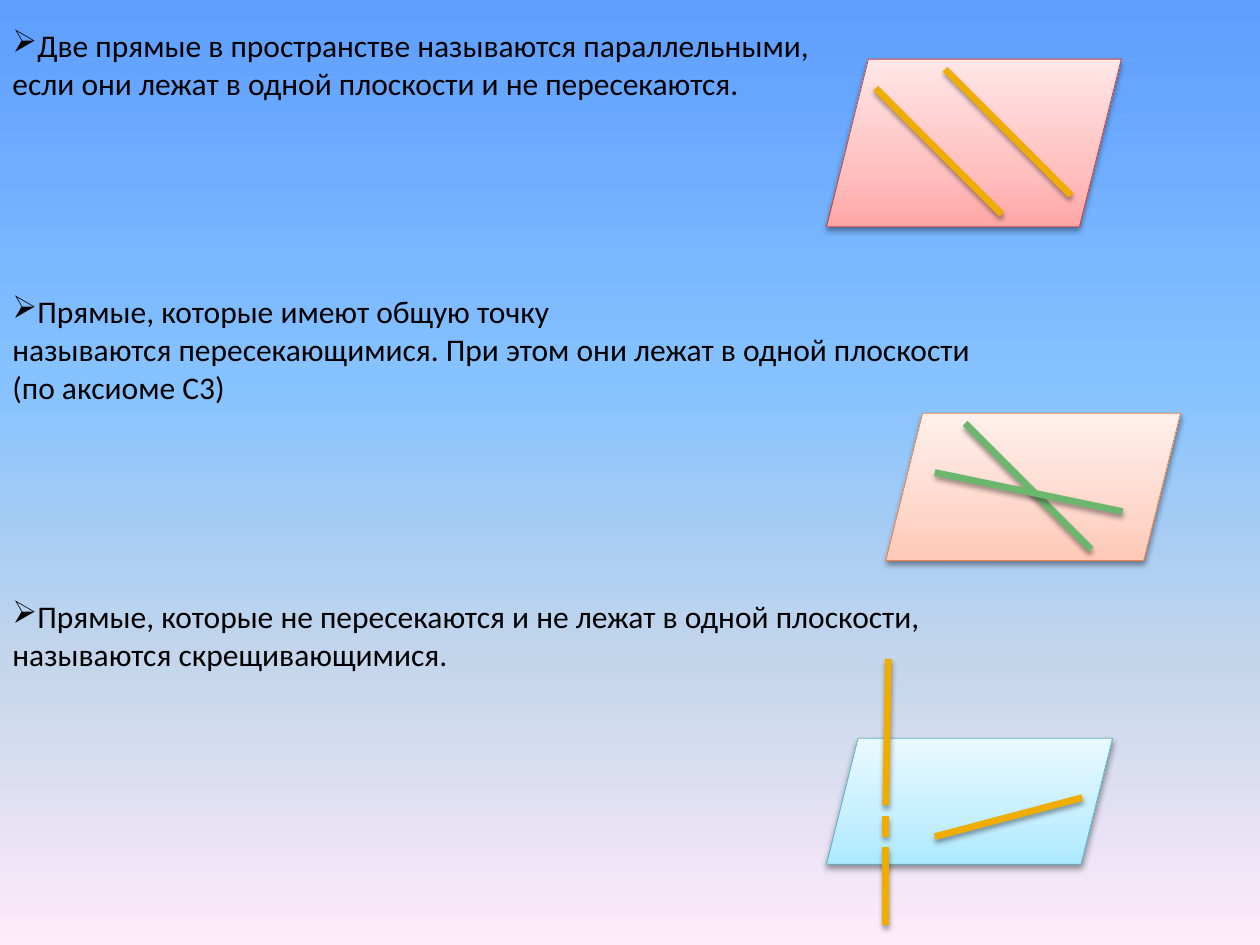
from lxml.etree import SubElement
from pptx import Presentation
from pptx.dml.color import RGBColor
from pptx.enum.shapes import MSO_CONNECTOR, MSO_SHAPE
from pptx.oxml.ns import qn
from pptx.util import Inches, Pt

BLACK = RGBColor(0x00, 0x00, 0x00)
GOLD = RGBColor(0xF0, 0xAD, 0x00)
GREEN = RGBColor(0x6B, 0xB7, 0x6D)
RED_EDGE = RGBColor(0xC5, 0x43, 0x42)
ORANGE_EDGE = RGBColor(0xE7, 0x82, 0x4C)
BLUE_EDGE = RGBColor(0x5B, 0xB3, 0xCA)

# Gradient stops: (position in percent, colour)
SKY = [(0, RGBColor(0x5E, 0x9E, 0xFF)), (40, RGBColor(0x85, 0xC2, 0xFF)),
       (70, RGBColor(0xC4, 0xD6, 0xEB)), (100, RGBColor(0xFF, 0xEB, 0xFA))]
RED_PLANE = [(0, RGBColor(0xFF, 0xA7, 0xA7)), (35, RGBColor(0xFF, 0xC1, 0xC0)),
             (100, RGBColor(0xFF, 0xE7, 0xE7))]
ORANGE_PLANE = [(0, RGBColor(0xFF, 0xC8, 0xB7)), (35, RGBColor(0xFF, 0xD8, 0xCC)),
                (100, RGBColor(0xFF, 0xF0, 0xEC))]
BLUE_PLANE = [(0, RGBColor(0xAD, 0xE9, 0xFF)), (35, RGBColor(0xC5, 0xEF, 0xFF)),
              (100, RGBColor(0xE9, 0xF9, 0xFF))]


def set_gradient(fill, owner, stops, angle):
    """Fill with any number of stops; the angle runs counter-clockwise."""
    fill.gradient()
    fill.gradient_angle = angle
    stop_list = owner.find(".//" + qn("a:gsLst"))
    for old_stop in list(stop_list):
        stop_list.remove(old_stop)
    for position, color in stops:
        stop = SubElement(stop_list, qn("a:gs"), pos=str(position * 1000))
        SubElement(stop, qn("a:srgbClr"), val=str(color))


def add_shadow(shape, blur):
    effects = SubElement(shape._element.spPr, qn("a:effectLst"))
    shadow = SubElement(effects, qn("a:outerShdw"), blurRad=str(Pt(blur)),
                        dist=str(Pt(2)), dir="5400000", rotWithShape="0")
    color = SubElement(shadow, qn("a:srgbClr"), val=str(BLACK))
    SubElement(color, qn("a:alpha"), val="38000")


def add_statement(slide, box, lines):
    """Definition text whose first line carries an arrow bullet."""
    statement = slide.shapes.add_textbox(*map(Inches, box)).text_frame
    statement.word_wrap = False
    for index, line in enumerate(lines):
        paragraph = statement.paragraphs[0] if index == 0 else statement.add_paragraph()
        paragraph.text = line
        if index == 0:
            SubElement(paragraph._p.get_or_add_pPr(), qn("a:buChar"), char="➢")
        paragraph.font.name = "Calibri"
        paragraph.font.size = Pt(18)
        paragraph.font.color.rgb = BLACK


def add_drawing(slide, box, stops, edge, line_color, segments):
    """Plane with straight lines; segment ends are offsets from the box corner."""
    left, top, width, height = box
    plane = slide.shapes.add_shape(MSO_SHAPE.PARALLELOGRAM, *map(Inches, box))
    set_gradient(plane.fill, plane._element, stops, 90)
    plane.line.color.rgb = edge
    plane.line.width = Pt(0.5)
    add_shadow(plane, 3.5)

    for x1, y1, x2, y2 in segments:
        segment = slide.shapes.add_connector(
            MSO_CONNECTOR.STRAIGHT, Inches(left + x1), Inches(top + y1),
            Inches(left + x2), Inches(top + y2))
        segment.line.color.rgb = line_color
        segment.line.width = Pt(3.82)
        add_shadow(segment, 3.1)


def main():
    deck = Presentation()
    deck.slide_width, deck.slide_height = Inches(10), Inches(7.5)
    slide = deck.slides.add_slide(deck.slide_layouts[6])
    set_gradient(slide.background.fill, slide._element, SKY, 270)

    # Parallel lines
    add_statement(slide, (0, 0.16, 6.65, 1.01), [
        "Две прямые в пространстве называются параллельными,",
        "если они лежат в одной плоскости и не пересекаются."])
    add_drawing(slide, (6.56, 0.47, 2.34, 1.33), RED_PLANE, RED_EDGE, GOLD,
                [(0.39, 0.23, 1.39, 1.23), (0.94, 0.08, 1.94, 1.08)])

    # Intersecting lines
    add_statement(slide, (0, 2.27, 7.98, 1.62), [
        "Прямые, которые имеют общую точку",
        "называются пересекающимися. При этом они лежат в одной плоскости",
        "(по аксиоме С3)"])
    add_drawing(slide, (7.03, 3.28, 2.34, 1.17), ORANGE_PLANE, ORANGE_EDGE, GREEN,
                [(0.63, 0.08, 1.63, 1.08), (0.39, 0.47, 1.88, 0.78)])

    # Skew lines: one in the plane, one piercing it and dashed behind it
    add_statement(slide, (0, 4.69, 7.49, 1.31), [
        "Прямые, которые не пересекаются и не лежат в одной плоскости,",
        "называются скрещивающимися."])
    add_drawing(slide, (6.56, 5.86, 2.27, 1), BLUE_PLANE, BLUE_EDGE, GOLD,
                [(0.86, 0.78, 2.03, 0.47), (0.49, -0.63, 0.47, 0.53),
                 (0.47, 0.62, 0.47, 0.78), (0.47, 0.86, 0.47, 1.02),
                 (0.47, 1.02, 0.47, 1.48)])

    deck.save("out.pptx")


if __name__ == "__main__":
    main()
